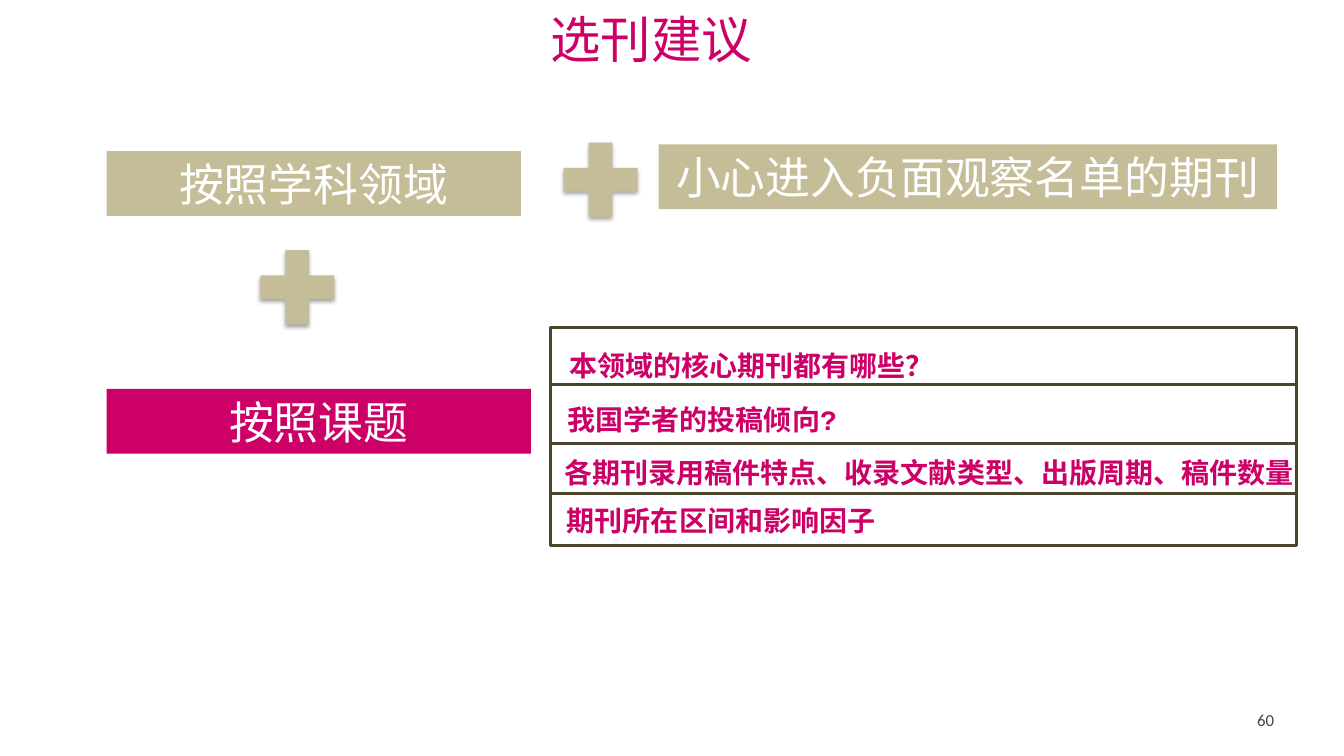
from lxml.etree import SubElement
from pptx import Presentation
from pptx.dml.color import RGBColor as Color
from pptx.enum.shapes import MSO_CONNECTOR as Connector, MSO_SHAPE as Shape
from pptx.enum.text import MSO_ANCHOR as Anchor, MSO_AUTO_SIZE as Fit, PP_ALIGN as Align
from pptx.oxml.ns import qn
from pptx.util import Inches, Pt

THEME = {
    "magenta": Color.from_string("CC0066"),
    "sand": Color.from_string("C4BD97"),
    "olive": Color.from_string("4A452A"),
    "white": Color.from_string("FFFFFF"),
    "grey": Color.from_string("444444"),
    "title": {"name": "Montserrat", "size": Pt(36), "bold": False},
    "banner": {"name": "Arial", "size": Pt(32)},
    "question": {"name": "Courier New", "size": Pt(20), "bold": True},
    "number": {"name": "Calibri", "size": Pt(12)},
    "rule": Pt(2.25),
}

deck = Presentation()
deck.slide_width, deck.slide_height = Inches(13.33), Inches(7.5)
slide = deck.slides.add_slide(deck.slide_layouts[5])
shapes = slide.shapes

# Grid of 16 columns by 9 rows
COL, ROW = deck.slide_width / 16, deck.slide_height / 9


def cells(left, top, width, height):
    return [round(n * unit) for n, unit in zip((left, top, width, height), (COL, ROW) * 2)]


def write(holder, text, style, color, align=Align.LEFT, **frame_format):
    frame = holder.text_frame
    for key, value in frame_format.items():
        setattr(frame, key, value)
    line = frame.paragraphs[0]
    line.alignment = align
    words = line.add_run()
    words.text = text
    for key, value in THEME[style].items():
        setattr(words.font, key, value)
    words.font.color.rgb = THEME[color]
    return line


# Title
title = shapes.title
title.left, title.top, title.width, title.height = cells(6.55, -0.26, 5.43, 1.09)
heading = write(title, "选刊建议", "title", "magenta", vertical_anchor=Anchor.BOTTOM,
                auto_size=Fit.NONE, margin_left=0, margin_top=0, margin_right=0, margin_bottom=0)
heading.line_spacing = 0.9

# Banners for the ways of choosing a journal
for text, left, top, width, color in [
    ("按照学科领域", 1.27, 1.8, 4.93, "sand"),
    ("按照课题", 1.27, 4.63, 5.05, "magenta"),
    ("小心进入负面观察名单的期刊", 7.84, 1.72, 7.36, "sand"),
]:
    banner = shapes.add_shape(Shape.RECTANGLE, *cells(left, top, width, 0.77))
    banner.shadow.inherit = False
    banner.fill.solid()
    banner.fill.fore_color.rgb = THEME[color]
    banner.line.fill.background()
    write(banner, text, "banner", "white", Align.CENTER, word_wrap=True,
          auto_size=Fit.SHAPE_TO_FIT_TEXT)

# Plus signs with a soft shadow below
for left, top in [(2.94, 2.82), (6.55, 1.54)]:
    plus = shapes.add_shape(Shape.MATH_PLUS, *cells(left, top, 1.2, 1.2))
    plus.fill.solid()
    plus.fill.fore_color.rgb = THEME["sand"]
    plus.line.fill.background()
    plus.shadow.inherit = False
    effects = plus.element.spPr.find(qn("a:effectLst"))
    shadow = SubElement(effects, qn("a:outerShdw"), blurRad=str(Pt(3.1)), dist=str(Pt(1.8)),
                        dir="5400000", rotWithShape="0")
    black = SubElement(shadow, qn("a:srgbClr"), val="000000")
    SubElement(black, qn("a:alpha"), val="35000")

# Frames and dividers of the question list
LIST_LEFT, LIST_WIDTH = 6.55, 8.88
for top, height in [(3.9, 1.98), (5.88, 0.62)]:
    box = shapes.add_shape(Shape.RECTANGLE, *cells(LIST_LEFT, top, LIST_WIDTH, height))
    box.shadow.inherit = False
    box.fill.background()
    box.line.color.rgb = THEME["olive"]
    box.line.width = THEME["rule"]

for top in (4.58, 5.28):
    start_x, y, end_x, _ = cells(LIST_LEFT, top, LIST_LEFT + LIST_WIDTH, 0)
    divider = shapes.add_connector(Connector.STRAIGHT, start_x, y, end_x, y)
    divider.line.color.rgb = THEME["olive"]
    divider.line.width = THEME["rule"]
    SubElement(divider.element.spPr, qn("a:effectLst"))

# Questions
for text, left, top, width in [
    ("本领域的核心期刊都有哪些？", 6.66, 4.09, 4.51),
    ("我国学者的投稿倾向?", 6.64, 4.73, 3.46),
    ("各期刊录用稿件特点、收录文献类型、出版周期、稿件数量", 6.6, 5.36, 8.99),
    ("期刊所在区间和影响因子", 6.63, 5.94, 3.95),
]:
    question = shapes.add_textbox(*cells(left, top, width, 0.53))
    write(question, text, "question", "magenta", word_wrap=False,
          auto_size=Fit.SHAPE_TO_FIT_TEXT)

# Page number
page = shapes.add_textbox(*cells(14.81, 8.36, 1.19, 0.64))
write(page, "60", "number", "grey", word_wrap=True, margin_left=Inches(0.13),
      margin_top=Inches(0.07), margin_right=Inches(0.13), margin_bottom=Inches(0.07))

deck.save("out.pptx")
